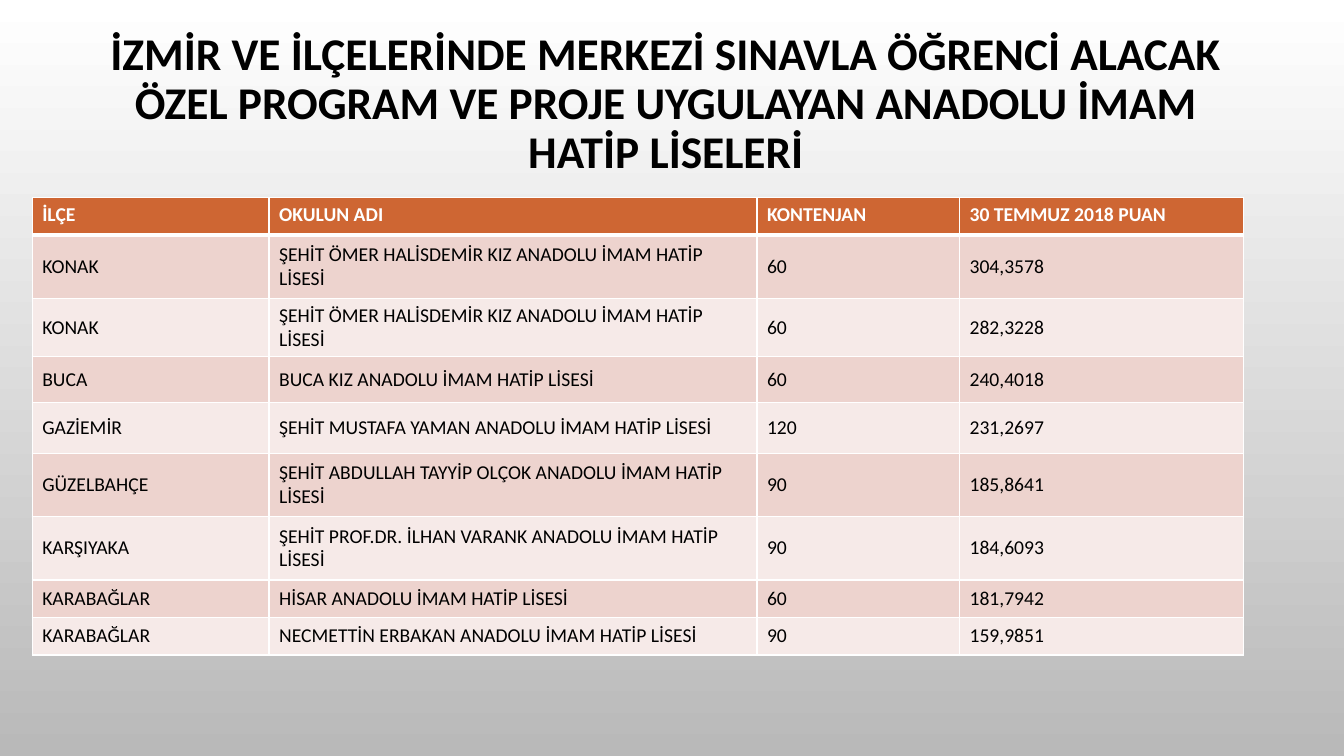
from dataclasses import dataclass

from lxml import etree
from pptx import Presentation
from pptx import util as u
from pptx.dml.color import RGBColor
from pptx.enum import text as t
from pptx.oxml import ns


@dataclass(frozen=True)
class Theme:
    font: str = "Calibri"
    title_size: float = 32.4
    table_size: float = 14
    ink: str = "000000"
    white: str = "FFFFFF"
    backdrop_end: str = "B9B9B9"
    header: str = "CE6633"
    bands: tuple[str, str] = ("EDD3CE", "F6EAE8")
    rule: float = 1
    header_rule: float = 3


@dataclass(frozen=True)
class School:
    district: str
    name: str
    quota: str
    score: str
    height: float


THEME = Theme()
TITLE = (
    "İZMİR VE İLÇELERİNDE MERKEZİ SINAVLA ÖĞRENCİ ALACAK "
    "ÖZEL PROGRAM VE PROJE UYGULAYAN ANADOLU İMAM HATİP LİSELERİ"
)
COLUMN_WIDTHS = (169.2, 348.5, 144.7, 203)
HEADER = School("İLÇE", "OKULUN ADI", "KONTENJAN", "30 TEMMUZ 2018 PUAN", 26.8)
SCHOOLS = (
    School("KONAK", "ŞEHİT ÖMER HALİSDEMİR KIZ ANADOLU İMAM HATİP LİSESİ", "60", "304,3578", 45.3),
    School("KONAK", "ŞEHİT ÖMER HALİSDEMİR KIZ ANADOLU İMAM HATİP LİSESİ", "60", "282,3228", 41.2),
    School("BUCA", "BUCA KIZ ANADOLU İMAM HATİP LİSESİ", "60", "240,4018", 33.1),
    School("GAZİEMİR", "ŞEHİT MUSTAFA YAMAN ANADOLU İMAM HATİP LİSESİ", "120", "231,2697", 36.2),
    School("GÜZELBAHÇE", "ŞEHİT ABDULLAH TAYYİP OLÇOK ANADOLU İMAM HATİP LİSESİ", "90", "185,8641", 45.3),
    School("KARŞIYAKA", "ŞEHİT PROF.DR. İLHAN VARANK ANADOLU İMAM HATİP LİSESİ", "90", "184,6093", 45.3),
    School("KARABAĞLAR", "HİSAR ANADOLU İMAM HATİP LİSESİ", "60", "181,7942", 26.8),
    School("KARABAĞLAR", "NECMETTİN ERBAKAN ANADOLU İMAM HATİP LİSESİ", "90", "159,9851", 26.8),
)


def add_run(paragraph, wording: str, size: float, color: str, bold: bool) -> None:
    run = paragraph.add_run()
    run.text = wording
    run.font.name = THEME.font
    run.font.size = u.Pt(size)
    run.font.bold = bold
    run.font.color.rgb = RGBColor.from_string(color)


def paint_background(slide) -> None:
    fill = slide.background.fill
    fill.gradient()
    fill.gradient_angle = 270
    for stop, color in zip(fill.gradient_stops, (THEME.white, THEME.backdrop_end)):
        stop.color.rgb = RGBColor.from_string(color)


def add_title(slide) -> None:
    heading = slide.shapes.add_textbox(u.Pt(63.4), u.Pt(23.8), u.Pt(824.4), u.Pt(102.2))
    frame = heading.text_frame
    frame.word_wrap = True
    frame.vertical_anchor = t.MSO_ANCHOR.MIDDLE
    paragraph = frame.paragraphs[0]
    paragraph.alignment = t.PP_ALIGN.CENTER
    paragraph.line_spacing = 0.9
    add_run(paragraph, TITLE, THEME.title_size, THEME.ink, True)


def add_borders(cell, top: float, bottom: float) -> None:
    properties = cell._tc.get_or_add_tcPr()
    widths = {"a:lnL": THEME.rule, "a:lnR": THEME.rule, "a:lnT": top, "a:lnB": bottom}
    for position, (side, width) in enumerate(widths.items()):
        line = etree.Element(ns.qn(side), w=str(int(u.Pt(width))))
        solid = etree.SubElement(line, ns.qn("a:solidFill"))
        etree.SubElement(solid, ns.qn("a:srgbClr"), val=THEME.white)
        properties.insert(position, line)


def fill_row(table, index: int, school: School) -> None:
    is_header = index == 0
    table.rows[index].height = u.Pt(school.height)
    background = THEME.header if is_header else THEME.bands[(index - 1) % 2]
    top = THEME.header_rule if index == 1 else THEME.rule
    bottom = THEME.header_rule if is_header else THEME.rule
    values = (school.district, school.name, school.quota, school.score)
    for cell, value in zip(table.rows[index].cells, values):
        cell.fill.solid()
        cell.fill.fore_color.rgb = RGBColor.from_string(background)
        cell.vertical_anchor = t.MSO_ANCHOR.TOP if is_header else t.MSO_ANCHOR.MIDDLE
        add_borders(cell, top, bottom)
        color = THEME.white if is_header else THEME.ink
        add_run(cell.text_frame.paragraphs[0], value, THEME.table_size, color, is_header)


def add_school_table(slide) -> None:
    entries = (HEADER, *SCHOOLS)
    table = slide.shapes.add_table(
        len(entries), len(COLUMN_WIDTHS), u.Pt(23), u.Pt(141.1),
        u.Pt(sum(COLUMN_WIDTHS)), u.Pt(sum(entry.height for entry in entries)),
    ).table
    for column, width in zip(table.columns, COLUMN_WIDTHS):
        column.width = u.Pt(width)
    for index, entry in enumerate(entries):
        fill_row(table, index, entry)


def main() -> None:
    deck = Presentation()
    deck.slide_width, deck.slide_height = u.Pt(960), u.Pt(540)
    slide = deck.slides.add_slide(deck.slide_layouts[6])
    paint_background(slide)
    add_title(slide)
    add_school_table(slide)
    deck.save("out.pptx")


if __name__ == "__main__":
    main()
